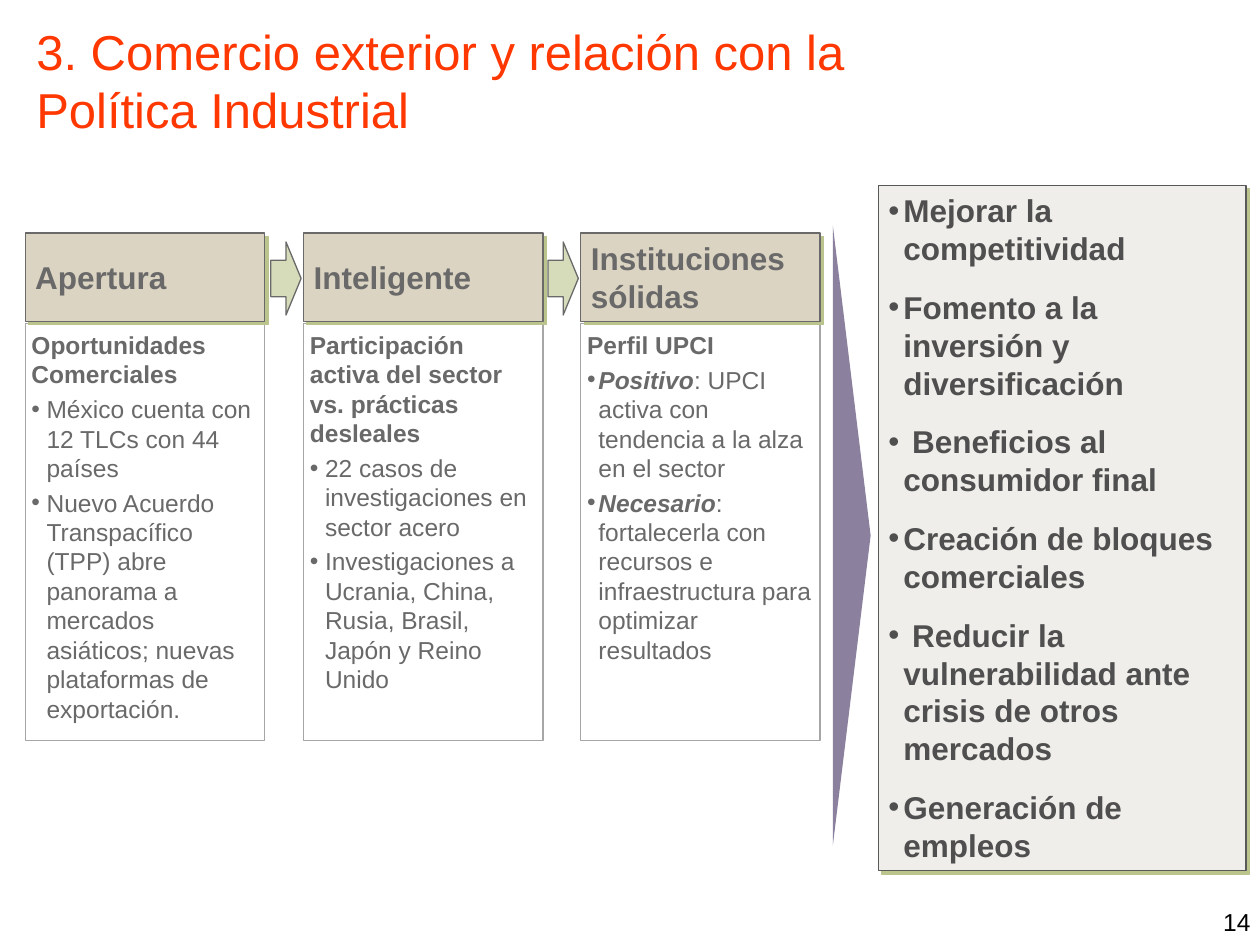
from dataclasses import dataclass

from lxml.etree import SubElement
from pptx import Presentation
from pptx.dml.color import RGBColor
from pptx.enum.shapes import MSO_SHAPE as Shape
from pptx.enum.text import MSO_ANCHOR as Anchor
from pptx.oxml.ns import qn
from pptx.util import Inches, Pt

FONT = "Arial"
GREY, DARK = "696969", "4F4F4F"


@dataclass
class Run:
    text: str
    bold: bool = False
    italic: bool = False


@dataclass
class Para:
    runs: list[Run]
    indent: float = 0  # hanging indent in inches; above zero means bulleted


@dataclass
class Pillar:
    left: float
    heading: str
    paras: list[Para]


def color(hex_color: str) -> RGBColor:
    return RGBColor.from_string(hex_color)


def add_box(s, kind, left, top, width, height, fill=None, line=None, shadow=False):
    sp = s.shapes.add_shape(kind, Inches(left), Inches(top), Inches(width), Inches(height))
    sp.shadow.inherit = False
    if fill:
        sp.fill.solid()
        sp.fill.fore_color.rgb = color(fill)
    else:
        sp.fill.background()
    if line:
        sp.line.color.rgb = color(line)
        sp.line.width = Pt(0.75)
    else:
        sp.line.fill.background()
    if shadow:
        effects = sp._element.spPr.find(qn("a:effectLst"))
        outer = SubElement(effects, qn("a:outerShdw"), blurRad="0", dist=str(Pt(2.8)),
                           dir="2700000", algn="ctr", rotWithShape="0")
        SubElement(outer, qn("a:srgbClr"), val="BAC48C")
    return sp


def add_text(s, left, top, width, height, paras: list[Para], size, hex_color,
             anchor=Anchor.TOP, inset=0.05, before=0, after=0):
    sp = s.shapes.add_textbox(Inches(left), Inches(top), Inches(width), Inches(height))
    tf = sp.text_frame
    tf.word_wrap = True
    tf.vertical_anchor = anchor
    tf.margin_left = tf.margin_right = Inches(inset)
    tf.margin_top = tf.margin_bottom = Inches(min(inset, 0.05))
    for i, para in enumerate(paras):
        p = tf.paragraphs[0] if i == 0 else tf.add_paragraph()
        p.space_before = Pt(before if i else 0)
        p.space_after = Pt(after)
        if para.indent:
            pPr = p._p.get_or_add_pPr()
            pPr.set("marL", str(Inches(para.indent)))
            pPr.set("indent", str(-Inches(para.indent)))
            SubElement(pPr, qn("a:buFont"), typeface=FONT)
            SubElement(pPr, qn("a:buChar"), char="•")
        for run in para.runs:
            r = p.add_run()
            r.text = run.text
            r.font.name = FONT
            r.font.size = Pt(size)
            r.font.bold = run.bold
            r.font.italic = run.italic
            r.font.color.rgb = color(hex_color)
    return sp


def add_pillar(s, pillar: Pillar):
    left = pillar.left
    add_box(s, Shape.RECTANGLE, left, 2.57, 1.9, 3.31, line="A6A6A6")
    add_text(s, left, 2.57, 1.9, 3.31, pillar.paras, 14, GREY, after=3)
    add_box(s, Shape.RECTANGLE, left, 1.85, 1.9, 0.7, "DCD4C2", GREY, shadow=True)
    add_text(s, left + 0.08, 1.88, 1.8, 0.64, [Para([Run(pillar.heading, bold=True)])],
             18, GREY, Anchor.MIDDLE, inset=0)


def lead(text: str) -> Para:
    return Para([Run(text, bold=True)])


def bullet(text: str, bold=False) -> Para:
    return Para([Run(text, bold)], 0.12)


def term(name: str, text: str) -> Para:
    return Para([Run(name, True, True), Run(text)], 0.09)


PILLARS = [
    Pillar(0.2, "Apertura", [
        lead("Oportunidades Comerciales"),
        bullet("México cuenta con 12 TLCs con 44 países"),
        bullet("Nuevo Acuerdo Transpacífico (TPP) abre panorama a mercados asiáticos; "
               "nuevas plataformas de exportación."),
    ]),
    Pillar(2.41, "Inteligente", [
        lead("Participación activa del sector vs. prácticas desleales"),
        bullet("22 casos de investigaciones en sector acero"),
        bullet("Investigaciones a Ucrania, China, Rusia, Brasil, Japón y Reino Unido"),
    ]),
    Pillar(4.61, "Instituciones sólidas", [
        lead("Perfil UPCI"),
        term("Positivo", ": UPCI activa con tendencia a la alza en el sector"),
        term("Necesario", ": fortalecerla con recursos e infraestructura para "
                          "optimizar resultados"),
    ]),
]

BENEFITS = [
    "Mejorar la competitividad",
    "Fomento a la inversión y diversificación",
    " Beneficios al consumidor final",
    "Creación de bloques comerciales",
    " Reducir la vulnerabilidad ante crisis de otros mercados",
    "Generación de empleos",
]


def main():
    prs = Presentation()
    prs.slide_width, prs.slide_height = Inches(10), Inches(7.5)
    s = prs.slides.add_slide(prs.slide_layouts[6])

    # Title
    title = "3. Comercio exterior y relación con la Política Industrial"
    add_text(s, 0.19, 0.2, 7.31, 0.87, [Para([Run(title)])], 28, "FF3700",
             Anchor.MIDDLE, inset=0.1)

    # Three pillars, with an arrow before each one after the first
    for pillar in PILLARS:
        add_pillar(s, pillar)
    for pillar in PILLARS[1:]:
        add_box(s, Shape.RIGHT_ARROW, pillar.left - 0.26, 1.92, 0.24, 0.58, "D6DCBA", GREY)

    # Wedge pointing at the benefits
    wedge = add_box(s, Shape.ISOSCELES_TRIANGLE, 4.3, 4.1, 4.92, 0.3, "8B819E")
    wedge.rotation = 90

    # Benefits panel
    add_box(s, Shape.RECTANGLE, 6.97, 1.47, 2.92, 5.44, "F0EEEA", "595959", shadow=True)
    add_text(s, 7, 1.47, 2.85, 5.49, [bullet(text, bold=True) for text in BENEFITS],
             18, DARK, before=6, after=6)

    # Page number
    add_text(s, 9.61, 7.15, 0.54, 0.35, [Para([Run("14")])], 14, "000000", inset=0.1)

    prs.save("out.pptx")


if __name__ == "__main__":
    main()
